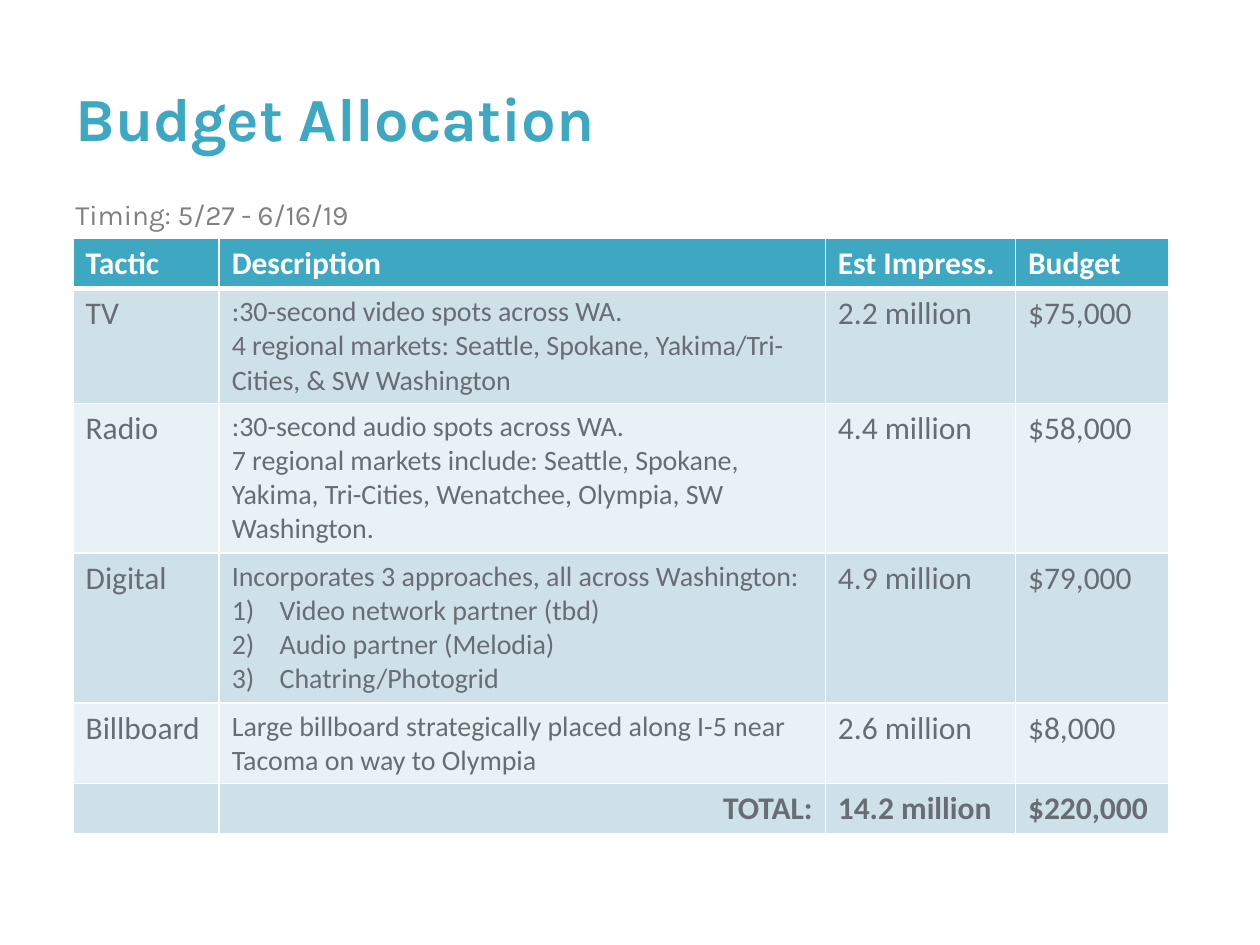
from lxml.etree import SubElement
from pptx import Presentation
from pptx.dml.color import RGBColor
from pptx.enum.text import MSO_ANCHOR as Anchor, PP_ALIGN as Align
from pptx.oxml.ns import qn
from pptx.util import Inches, Pt

TEAL, GRAY, SLATE, WHITE = "3EA8C3", "808080", "676D73", "FFFFFF"
BANDS = ("CEE1E9", "E8F1F5")

COLUMN_WIDTHS = (1.16, 4.81, 1.51, 1.22)
ROW_HEIGHTS = (0.4, 0.91, 1.19, 1.19, 0.64, 0.4)
# Each cell is a list of lines; a "#" line is a numbered item.
BUDGET_ROWS = [
    (["Tactic"], ["Description"], ["Est Impress."], ["Budget"]),
    (["TV"],
     [":30-second video spots across WA.",
      "4 regional markets: Seattle, Spokane, Yakima/Tri-Cities, & SW Washington"],
     ["2.2 million"], ["$75,000"]),
    (["Radio"],
     [":30-second audio spots across WA.",
      "7 regional markets include: Seattle, Spokane, Yakima, Tri-Cities, "
      "Wenatchee, Olympia, SW Washington."],
     ["4.4 million"], ["$58,000"]),
    (["Digital"],
     ["Incorporates 3 approaches, all across Washington:",
      "#Video network partner (tbd)", "#Audio partner (Melodia)",
      "#Chatring/Photogrid"],
     ["4.9 million"], ["$79,000"]),
    (["Billboard"],
     ["Large billboard strategically placed along I-5 near Tacoma on way to Olympia"],
     ["2.6 million"], ["$8,000"]),
    ([], ["TOTAL:"], ["14.2 million"], ["$220,000"]),
]


def color(value):
    return RGBColor.from_string(value)


def number_paragraph(para):
    """Turn a paragraph into a hanging numbered item such as 1)."""
    props = para._p.get_or_add_pPr()
    props.set("marL", str(Inches(0.38)))
    props.set("indent", str(-Inches(0.38)))
    SubElement(props, qn("a:buFont"), typeface="+mj-lt")
    SubElement(props, qn("a:buAutoNum"), type="arabicParenR")


def add_borders(cell, widths):
    """Draw white borders; widths are points for left, right, top, bottom."""
    props = cell._tc.get_or_add_tcPr()
    for side, width in zip("LRTB", widths):
        line = SubElement(props, qn(f"a:ln{side}"), w=str(Pt(width)))
        fill = SubElement(line, qn("a:solidFill"))
        SubElement(fill, qn("a:srgbClr"), val=WHITE)


class SlideBuilder:
    def __init__(self, page):
        self.page = page

    def span(self, para, text, style):
        span = para.add_run()
        span.text = text
        for name, value in style.items():
            if name == "color":
                span.font.color.rgb = color(value)
            else:
                setattr(span.font, name, value)

    def text(self, place, text, style, anchor=Anchor.TOP):
        box = self.page.shapes.add_textbox(*map(Inches, place))
        frame = box.text_frame
        frame.word_wrap = True
        frame.vertical_anchor = anchor
        self.span(frame.paragraphs[0], text, style)

    def cell(self, cell, lines, style, fill, borders, align):
        add_borders(cell, borders)
        cell.fill.solid()
        cell.fill.fore_color.rgb = color(fill)
        frame = cell.text_frame
        for index, line in enumerate(lines):
            para = frame.add_paragraph() if index else frame.paragraphs[0]
            para.alignment = align
            if line.startswith("#"):
                number_paragraph(para)
            self.span(para, line.lstrip("#"), style)

    def table(self, place, rows, widths, heights):
        shape = self.page.shapes.add_table(len(rows), len(widths), *map(Inches, place))
        table = shape.table
        for column, width in zip(table.columns, widths):
            column.width = Inches(width)
        for row, height in zip(table.rows, heights):
            row.height = Inches(height)
        last = len(rows) - 1
        for r, row in enumerate(rows):
            header, total = r == 0, r == last
            fill = TEAL if header else BANDS[(r - 1) % 2]
            borders = (1, 1, 3 if r == 1 else 1, 3 if header else 1)
            for c, lines in enumerate(row):
                description = c == 1 and not header and not total
                style = {
                    "name": "Calibri",
                    "size": Pt(16 if description else 18),
                    "bold": header or total,
                    "color": WHITE if header else SLATE,
                }
                align = Align.RIGHT if total and c == 1 else Align.LEFT
                self.cell(table.cell(r, c), lines, style, fill, borders, align)


def main():
    deck = Presentation()
    deck.slide_width, deck.slide_height = Inches(10), Inches(7.5)
    builder = SlideBuilder(deck.slides.add_slide(deck.slide_layouts[6]))
    builder.text((0.5, 0.3, 9, 1.25), "Budget Allocation",
                 {"name": "Karla", "size": Pt(35), "bold": True, "color": TEAL},
                 Anchor.MIDDLE)
    builder.table((0.58, 1.89, sum(COLUMN_WIDTHS), sum(ROW_HEIGHTS)),
                  BUDGET_ROWS, COLUMN_WIDTHS, ROW_HEIGHTS)
    builder.text((0.5, 1.52, 9, 0.89), "Timing: 5/27 - 6/16/19",
                 {"name": "Karla", "size": Pt(16), "color": GRAY})
    deck.save("out.pptx")


if __name__ == "__main__":
    main()
